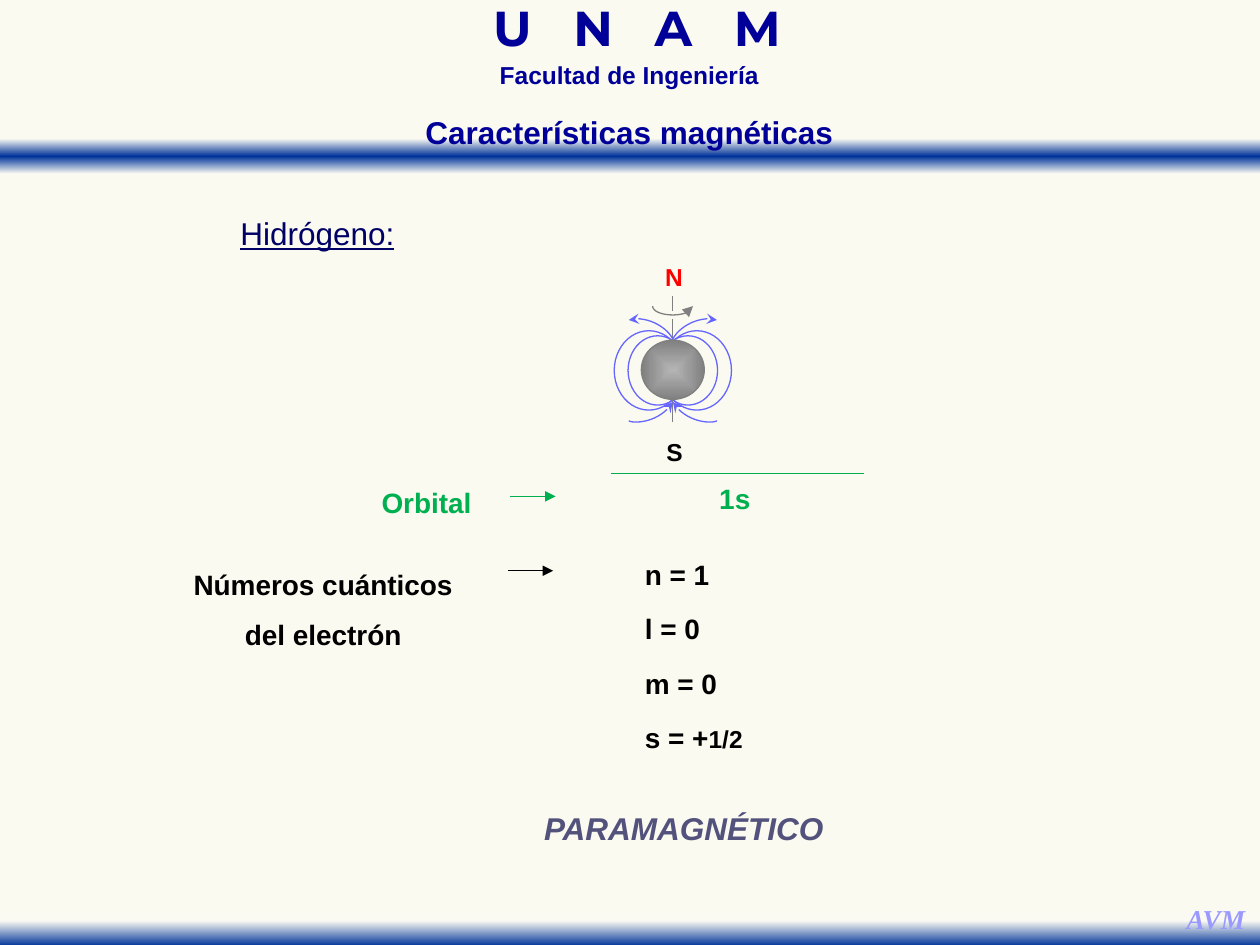
from dataclasses import dataclass

from lxml.etree import SubElement
from pptx import Presentation
from pptx.dml.color import RGBColor
from pptx.enum.shapes import MSO_CONNECTOR, MSO_SHAPE
from pptx.enum.text import MSO_AUTO_SIZE, PP_ALIGN
from pptx.oxml import parse_xml
from pptx.oxml.ns import nsdecls, qn
from pptx.util import Inches, Pt


@dataclass(frozen=True)
class Theme:
    paper: str = "FAFAF0"
    fade: str = "FAFAF2"
    band: str = "003399"
    navy: str = "000099"
    head: str = "000066"
    green: str = "00B050"
    black: str = "000000"
    red: str = "FF0000"
    gray: str = "808080"
    shine: str = "B4B4B4"
    field: str = "6666FF"
    mark: str = "9999FF"
    result: str = "52527C"
    font: str = "Arial"
    logo: str = "Montserrat"
    serif: str = "Times New Roman"
    big: float = 28
    title: float = 18
    body: float = 16
    sign: float = 15.6
    small: float = 14
    line: float = 0.75


@dataclass(frozen=True)
class Box:
    x: float
    y: float
    w: float
    h: float

    def inner(self, x, y, w, h):
        return Box(self.x + x, self.y + y, w, h)

    def size(self):
        return [Inches(v) for v in (self.x, self.y, self.w, self.h)]


T = Theme()


def add_text(shapes, box, text, color, size=T.body, font=T.font, align=PP_ALIGN.JUSTIFY,
             space=1.5, bold=True, italic=False, under=False, wrap=True):
    frame = shapes.add_textbox(*box.size()).text_frame
    frame.text = text
    frame.word_wrap = wrap
    frame.auto_size = MSO_AUTO_SIZE.SHAPE_TO_FIT_TEXT
    para = frame.paragraphs[0]
    para.alignment = align
    para.line_spacing = space
    run = para.runs[0]
    style(run, color, size, font)
    run.font.bold, run.font.italic, run.font.underline = bold, italic, under
    return para


def style(run, color, size, font=T.font):
    run.font.size = Pt(size)
    run.font.name = font
    run.font.bold = True
    run.font.color.rgb = RGBColor.from_string(color)


def set_line(shape, color, end=None, kind="triangle"):
    shape.line.color.rgb = RGBColor.from_string(color)
    shape.line.width = Pt(T.line)
    if end:
        SubElement(shape._element.spPr.find(qn("a:ln")), qn(f"a:{end}"), type=kind)


def add_line(shapes, start, stop, color, end=None):
    line = shapes.add_connector(MSO_CONNECTOR.STRAIGHT, *[Inches(v) for v in (*start, *stop)])
    set_line(line, color, end)
    SubElement(line._element.spPr, qn("a:effectLst"))


def add_shape(shapes, kind, box):
    shape = shapes.add_shape(kind, *box.size())
    shape.shadow.inherit = False
    shape.fill.background()
    return shape


def set_blend(shape, stops, way):
    shape.fill.gradient()
    old = shape._element.spPr.find(qn("a:gradFill"))
    marks = "".join(f'<a:gs pos="{pos * 1000}"><a:srgbClr val="{color}"/></a:gs>'
                    for pos, color in stops)
    new = parse_xml(f'<a:gradFill {nsdecls("a")} rotWithShape="1">'
                    f'<a:gsLst>{marks}</a:gsLst>{way}</a:gradFill>')
    old.getparent().replace(old, new)


def add_band(shapes, box, stops):
    band = add_shape(shapes, MSO_SHAPE.RECTANGLE, box)
    set_blend(band, stops, '<a:lin ang="5400000" scaled="1"/>')
    band.line.fill.background()


def add_curve(shapes, mid, points, color, end, kind, steps=12):
    spots = [points[0]]
    for i in range(0, len(points) - 1, 3):
        a, b, c, d = points[i:i + 4]
        for step in range(1, steps + 1):
            t = step / steps
            u = 1 - t
            spots.append([u**3 * p + 3 * u * u * t * q + 3 * u * t * t * r + t**3 * s
                          for p, q, r, s in zip(a, b, c, d)])
    spots = [(Inches(mid[0] + x), Inches(mid[1] + y)) for x, y in spots]
    form = shapes.build_freeform(*spots[0])
    form.add_line_segments(spots[1:], close=False)
    curve = form.convert_to_shape()
    curve.shadow.inherit = False
    curve.fill.background()
    set_line(curve, color, end, kind)


def add_frame(shapes, box):
    add_band(shapes, box.inner(0, 1.1, box.w, 0.28),
             [(0, T.fade), (50, T.band), (100, T.fade)])
    add_band(shapes, box.inner(0, box.h - 0.27, box.w, 0.28), [(28, T.fade), (100, T.band)])
    head = dict(align=PP_ALIGN.CENTER, space=0.7)
    name = add_text(shapes, box.inner(3.1, 0.06, 3.91, 0.43), "U N A M", T.navy,
                    T.big, T.logo, **head)
    name.runs[0]._r.rPr.set("spc", "800")
    add_text(shapes, box.inner(3.21, 0.49, 3.57, 0.27), "Facultad de Ingeniería",
             T.navy, T.small, **head)
    add_text(shapes, box.inner(9.31, 7.18, 0.68, 0.37), "AVM", T.mark, T.sign, T.serif,
             italic=True, wrap=False, **head)
    add_text(shapes, box.inner(2.83, 0.93, 4.33, 0.32), "Características magnéticas",
             T.navy, T.title, **head)


def add_atom(shapes, box):
    x, y = mid = box.x + box.w / 2, box.y + 0.91
    for shift, w, h in ((0.19, 0.55, 0.63), (0.12, 0.47, 0.55)):
        for side in (1, -1):
            loop = Box(x + side * shift - w / 2, y - h / 2, w, h)
            set_line(add_shape(shapes, MSO_SHAPE.OVAL, loop), T.field)
    ball = add_shape(shapes, MSO_SHAPE.OVAL, Box(x - 0.25, y - 0.24, 0.5, 0.47))
    set_blend(ball, [(0, T.shine), (100, T.gray)],
              '<a:path path="shape"><a:fillToRect l="50000" t="50000" r="50000" b="50000"/></a:path>')
    set_line(ball, T.gray)
    for top, low in ((0.23, 0.41), (-0.41, -0.24), (-0.59, -0.47)):
        add_line(shapes, (x, y + top), (x, y + low), T.gray)
    spin = [(0.16, -0.51), (0.16, -0.47), (0.09, -0.44), (0, -0.44),
            (-0.09, -0.44), (-0.16, -0.47), (-0.16, -0.51)]
    add_curve(shapes, mid, spin, T.gray, "headEnd", "triangle")
    flow = [(0, 0.25), (0.05, 0.34), (0.17, 0.41), (0.29, 0.41),
            (0.31, 0.41), (0.33, 0.41), (0.35, 0.4)]
    for side in (-1, 1):
        for way, end in ((-1, "tailEnd"), (1, "headEnd")):
            points = [(side * p, way * q) for p, q in flow]
            add_curve(shapes, mid, points, T.field, end, "stealth")
    add_text(shapes, box.inner(0.3, 0, 0.33, 0.33), "N", T.red, T.small, space=1)
    add_text(shapes, box.inner(0.31, 1.39, 0.34, 0.33), "S", T.black, T.small, space=1)


def add_orbit(shapes, box):
    add_text(shapes, box.inner(0, 0.03, 0.99, 0.51), "Orbital", T.green)
    y = box.y + 0.3
    add_line(shapes, (box.x + 1.12, y), (box.x + 1.48, y), T.green, "tailEnd")
    top = box.y + 0.12
    add_line(shapes, (box.x + 1.92, top), (box.x + box.w, top), T.green)
    add_text(shapes, box.inner(2.68, 0, 0.49, 0.51), "1s", T.green)


def add_label(shapes, box):
    add_text(shapes, box.inner(0, 0, 2.43, box.h), "Números cuánticos del electrón",
             T.black, align=PP_ALIGN.CENTER)
    y = box.y + 0.21
    add_line(shapes, (box.x + 2.68, y), (box.x + box.w, y), T.black, "tailEnd")


def add_values(shapes, box):
    rows = ["n = 1", "l = 0", "m = 0", "s = +"]
    step = (box.h - 0.5) / (len(rows) - 1)
    for i, row in enumerate(rows):
        para = add_text(shapes, box.inner(0, i * step, box.w, 0.5), row, T.black)
    half = para.add_run()
    half.text = "1/2"
    style(half, T.black, T.small)


def main():
    deck = Presentation()
    deck.slide_width, deck.slide_height = Inches(10), Inches(7.5)
    slide = deck.slides.add_slide(deck.slide_layouts[6])
    slide.background.fill.solid()
    slide.background.fill.fore_color.rgb = RGBColor.from_string(T.paper)
    shapes = slide.shapes
    add_frame(shapes, Box(0, 0, 10, 7.5))
    add_text(shapes, Box(1.81, 1.5, 1.56, 0.55), "Hidrógeno:", T.head, T.title,
             bold=False, under=True)
    add_orbit(shapes.add_group_shape().shapes, Box(2.93, 3.64, 3.93, 0.54))
    add_atom(shapes.add_group_shape().shapes, Box(4.88, 2.03, 0.92, 1.72))
    add_label(shapes.add_group_shape().shapes, Box(1.35, 4.32, 3.04, 0.91))
    add_values(shapes, Box(5.02, 4.24, 1.07, 1.8))
    add_text(shapes, Box(4.22, 6.22, 2.47, 0.55), "PARAMAGNÉTICO", T.result, T.title,
             italic=True)
    deck.save("out.pptx")


if __name__ == "__main__":
    main()
